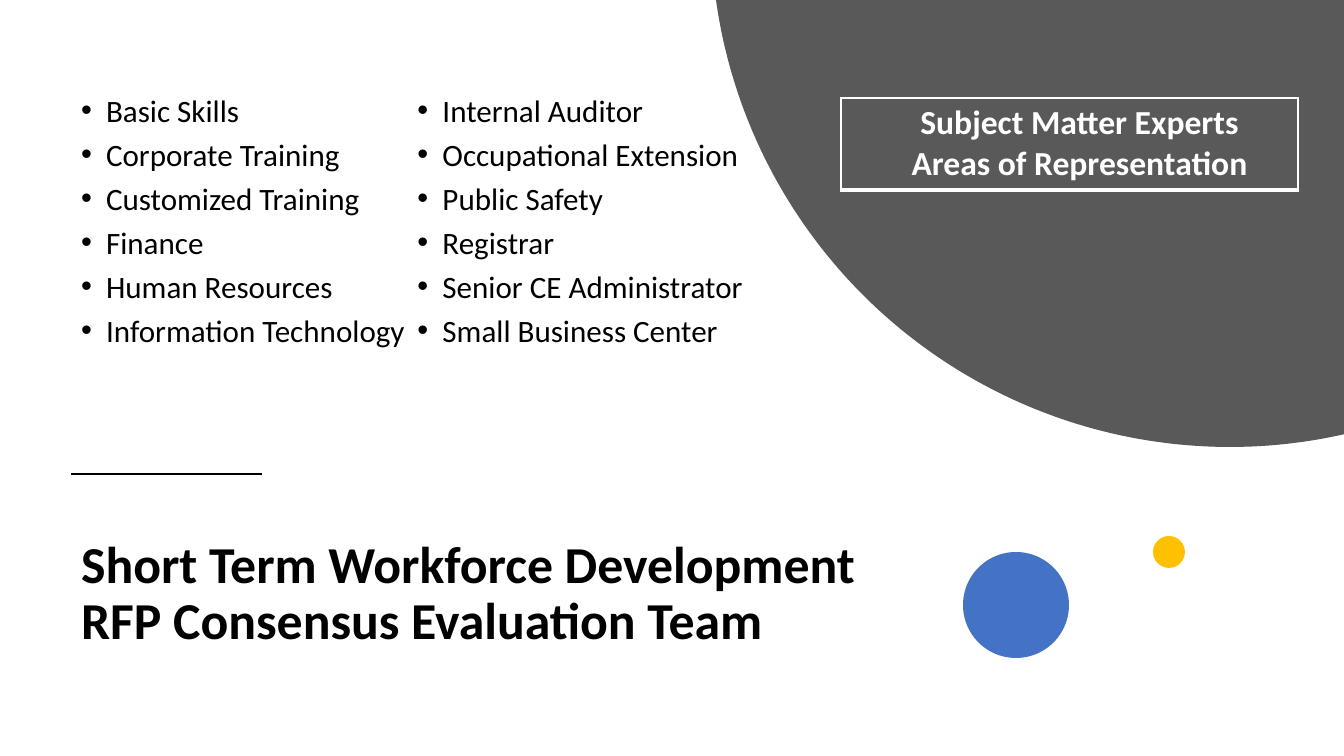
"""Build the evaluation team slide with its areas of representation."""
from math import acos, asin, cos, pi, sin

from lxml import etree
from pptx import Presentation
from pptx.dml.color import RGBColor
from pptx.enum.shapes import MSO_CONNECTOR, MSO_SHAPE
from pptx.enum.text import MSO_ANCHOR, MSO_AUTO_SIZE, PP_ALIGN
from pptx.oxml.ns import qn
from pptx.util import Pt

WIDTH, HEIGHT = 1344, 756
PX = 12192000 / WIDTH
BLACK = RGBColor(0x00, 0x00, 0x00)
WHITE = RGBColor(0xFF, 0xFF, 0xFF)
GRAY = RGBColor(0x59, 0x59, 0x59)
BLUE = RGBColor(0x44, 0x72, 0xC4)
GOLD = RGBColor(0xFF, 0xC0, 0x00)
LEFT, CENTER = PP_ALIGN.LEFT, PP_ALIGN.CENTER
TOP, MIDDLE = MSO_ANCHOR.TOP, MSO_ANCHOR.MIDDLE
NO_AUTOFIT = MSO_AUTO_SIZE.NONE
STRAIGHT = MSO_CONNECTOR.STRAIGHT
OVAL = MSO_SHAPE.OVAL

TITLE = "Short Term Workforce Development RFP Consensus Evaluation Team"
AREAS = [
    "Basic Skills", "Corporate Training", "Customized Training",
    "Finance", "Human Resources", "Information Technology",
    "Internal Auditor", "Occupational Extension", "Public Safety",
    "Registrar", "Senior CE Administrator", "Small Business Center",
]
HEADING = ["Subject Matter Experts", "Areas of Representation"]

TITLE_FONT = {"name": "Calibri", "size": Pt(37), "bold": True}
AREA_FONT = {"name": "Calibri", "size": Pt(22.2), "bold": False}
HEADING_FONT = {"name": "Calibri", "size": Pt(24), "bold": True}
TITLE_PARAGRAPH = {"alignment": LEFT, "line_spacing": 0.9}
AREA_PARAGRAPH = {"alignment": LEFT, "line_spacing": 0.8,
                  "space_before": Pt(10)}
HEADING_PARAGRAPH = {"alignment": CENTER}
BORDERS = {"a:lnL": 1, "a:lnR": 1, "a:lnT": 1, "a:lnB": 3}


def emu(pixels):
    return round(pixels * PX)


def apply(target, values):
    for name, value in values.items():
        setattr(target, name, value)


class SlideBuilder:
    """Draws styled elements on one slide, measured in pixels."""

    def __init__(self, presentation):
        self.slide = presentation.slides.add_slide(
            presentation.slide_layouts[1])
        self.shapes = self.slide.shapes

    def add_lines(self, frame, lines, font, color, layout):
        for index, line in enumerate(lines):
            paragraph = (frame.add_paragraph() if index
                         else frame.paragraphs[0])
            run = paragraph.add_run()
            run.text = line
            apply(paragraph, layout)
            apply(run.font, font)
            run.font.color.rgb = color

    def indent(self, frame, margin, first):
        for paragraph in frame.paragraphs:
            properties = paragraph._p.get_or_add_pPr()
            properties.set("marL", str(emu(margin)))
            properties.set("indent", str(emu(first)))

    def place(self, placeholder, box, anchor):
        names = ("left", "top", "width", "height")
        apply(placeholder, dict(zip(names, map(emu, box))))
        frame = placeholder.text_frame
        apply(frame, {"word_wrap": True, "auto_size": NO_AUTOFIT,
                      "vertical_anchor": anchor})
        return frame

    def title(self, box, text):
        frame = self.place(self.shapes.title, box, MIDDLE)
        self.add_lines(frame, [text], TITLE_FONT, BLACK, TITLE_PARAGRAPH)

    def column_list(self, box, items, columns, bottom):
        frame = self.place(self.slide.placeholders[1], box, TOP)
        frame.margin_bottom = emu(bottom)
        frame._txBody.bodyPr.set("numCol", str(columns))
        self.add_lines(frame, items, AREA_FONT, BLACK, AREA_PARAGRAPH)
        self.indent(frame, 25, -25)
        for paragraph in frame.paragraphs:
            bullet = etree.SubElement(paragraph._p.pPr, qn("a:buChar"))
            bullet.set("char", "•")

    def paint(self, shape, color):
        shape.shadow.inherit = False
        shape.fill.solid()
        shape.fill.fore_color.rgb = color
        shape.line.fill.background()

    def circle(self, left, top, size, color):
        shape = self.shapes.add_shape(
            OVAL, *map(emu, (left, top, size, size)))
        self.paint(shape, color)

    def corner_disc(self, center_x, center_y, radius, color, steps=120):
        start = acos((WIDTH - center_x) / radius)
        end = pi - asin(-center_y / radius)
        angles = [start + (end - start) * step / steps
                  for step in range(steps + 1)]
        arc = [(emu(center_x + radius * cos(angle)),
                emu(center_y + radius * sin(angle))) for angle in angles]
        builder = self.shapes.build_freeform(emu(WIDTH), 0)
        builder.add_line_segments(arc, close=True)
        self.paint(builder.convert_to_shape(), color)

    def rule(self, left, right, y, color, weight):
        line = self.shapes.add_connector(
            STRAIGHT, *map(emu, (left, y, right, y)))
        line.line.color.rgb = color
        line.line.width = Pt(weight)
        etree.SubElement(line._element.spPr, qn("a:effectLst"))

    def heading_table(self, box, lines):
        table = self.shapes.add_table(1, 1, *map(emu, box)).table
        apply(table, {"first_row": False, "horz_banding": False})
        cell = table.cell(0, 0)
        self.add_lines(cell.text_frame, lines, HEADING_FONT, WHITE,
                       HEADING_PARAGRAPH)
        self.indent(cell.text_frame, 20, 0)
        properties = cell._tc.get_or_add_tcPr()
        for side, weight in BORDERS.items():
            border = etree.SubElement(properties, qn(side), w=str(Pt(weight)))
            fill = etree.SubElement(border, qn("a:solidFill"))
            etree.SubElement(fill, qn("a:srgbClr"), val=str(WHITE))
        cell.fill.background()


def main():
    presentation = Presentation()
    presentation.slide_width = emu(WIDTH)
    presentation.slide_height = emu(HEIGHT)
    builder = SlideBuilder(presentation)
    builder.title((71, 499, 816, 192), TITLE)
    builder.column_list((71, 94, 693, 326), AREAS, columns=2, bottom=36)
    builder.corner_disc(1230, -72, 519, GRAY)
    builder.rule(71, 262, 474, BLACK, 1.5)
    builder.circle(963, 552, 106, BLUE)
    builder.circle(1153, 536, 32, GOLD)
    builder.heading_table((841, 98, 457, 90), HEADING)
    presentation.save("out.pptx")


if __name__ == "__main__":
    main()
